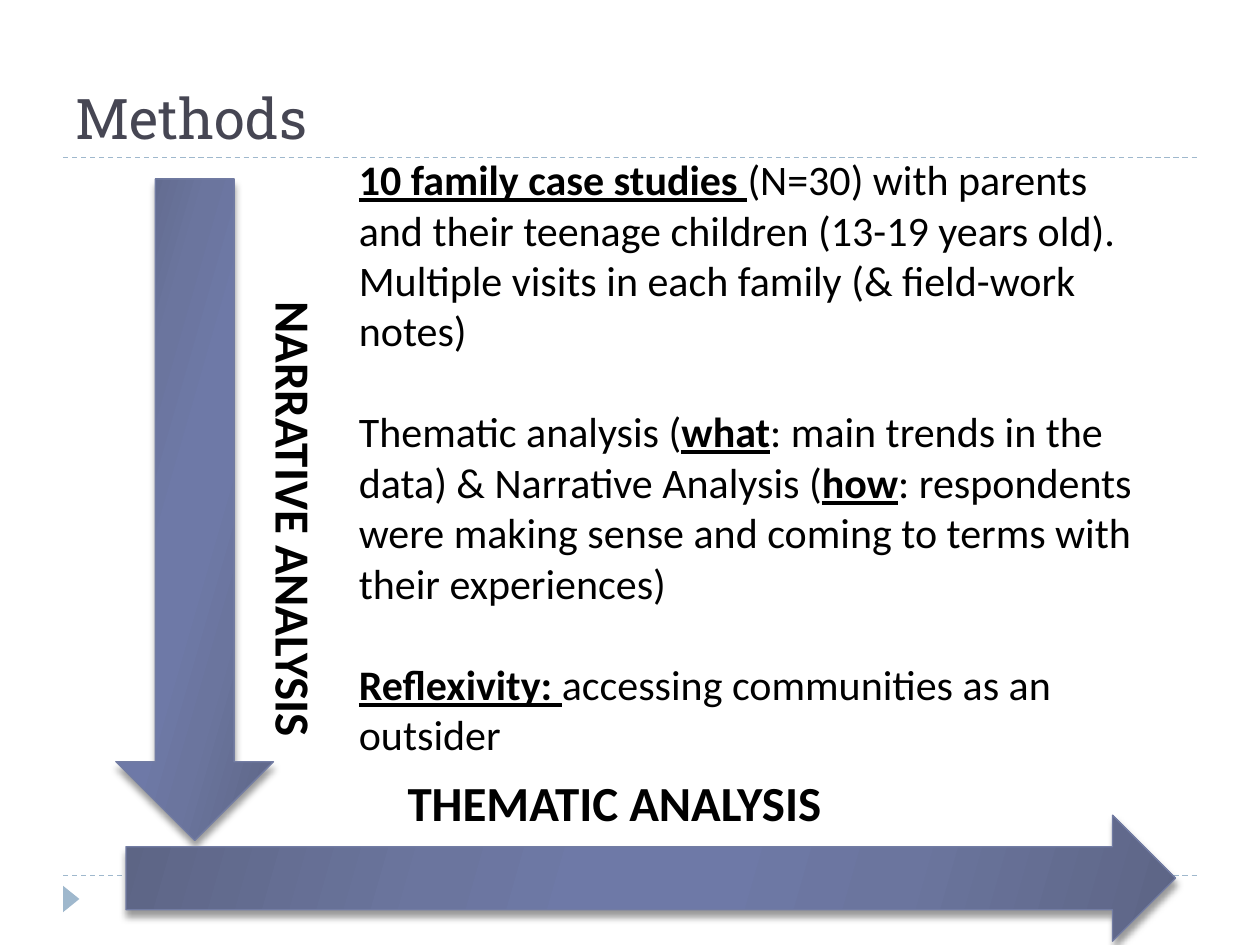
import dataclasses
import typing

import pptx
import pptx.dml.color
import pptx.enum.dml
import pptx.enum.shapes
import pptx.enum.text
import pptx.oxml
import pptx.oxml.ns
import pptx.util

EMU_PER_PX = 9144  # 100 px to the inch
SHAPES = pptx.enum.shapes.MSO_SHAPE
ALIGN = pptx.enum.text.PP_ALIGN
LEFT, CENTER = ALIGN.LEFT, ALIGN.CENTER

ACCENT = "9FB8CD"
ARROW_LINE = "727CA3"
ARROW_STOPS = [(0, "5D6585"), (30, "6B759E"), (45, "6E79A7"),
               (55, "6E79A7"), (73, "6B759E"), (100, "5D6585")]
TITLE_FORMAT = {"name": "Roboto Slab", "size": pptx.util.Pt(32), "bold": False}
LABEL_FORMAT = {"name": "Calibri", "size": pptx.util.Pt(28), "bold": True}
BODY_FORMAT = {"name": "Calibri", "size": pptx.util.Pt(24), "bold": False}
KEY_FORMAT = BODY_FORMAT | {"bold": True, "underline": True}


class Box(typing.NamedTuple):
    left: int
    top: int
    width: int
    height: int


class Run(typing.NamedTuple):
    text: str
    format: dict


@dataclasses.dataclass
class Arrow:
    preset: SHAPES
    box: Box
    rotation: int = 0


@dataclasses.dataclass
class TextBlock:
    box: Box
    paragraphs: list[list[Run]]
    alignment: ALIGN = CENTER
    rotation: int = 0


RULE_TOPS = [695, 125]
ARROWS = [
    Arrow(SHAPES.UP_ARROW, Box(92, 142, 125, 525), 180),
    Arrow(SHAPES.RIGHT_ARROW, Box(100, 647, 833, 100)),
]
TEXT_BLOCKS = [
    TextBlock(Box(117, 608, 750, 57), [[Run("THEMATIC ANALYSIS ", LABEL_FORMAT)]]),
    TextBlock(Box(-77, 360, 575, 104), [[Run("NARRATIVE ANALYSIS", LABEL_FORMAT)]],
              rotation=90),
    TextBlock(Box(275, 117, 637, 495), [
        [Run("10 family case studies ", KEY_FORMAT),
         Run("(N=30) with parents and their teenage children (13-19 years old). "
             "Multiple visits in each family (& field-work notes)", BODY_FORMAT)],
        [Run("Thematic analysis (", BODY_FORMAT),
         Run("what", KEY_FORMAT),
         Run(": main trends in the data) & Narrative Analysis (", BODY_FORMAT),
         Run("how", KEY_FORMAT),
         Run(": respondents were making sense and coming to terms with "
             "their experiences)", BODY_FORMAT)],
        [Run("Reflexivity: ", KEY_FORMAT),
         Run("accessing communities as an outsider", BODY_FORMAT)],
    ], LEFT),
]


def px(length: int) -> pptx.util.Emu:
    return pptx.util.Emu(length * EMU_PER_PX)


def emu_box(box: Box) -> list[pptx.util.Emu]:
    return [px(length) for length in box]


def color(value: str) -> pptx.dml.color.RGBColor:
    return pptx.dml.color.RGBColor.from_string(value)


def drawing_element(parent, tag: str, **attributes):
    """Append an element of the DrawingML namespace to parent."""
    element = pptx.oxml.parse_xml(f"<a:{tag} {pptx.oxml.ns.nsdecls('a')}/>")
    for name, value in attributes.items():
        element.set(name, str(value))
    parent.append(element)
    return element


def add_run(paragraph, run: Run, text_color: str) -> None:
    text_run = paragraph.add_run()
    text_run.text = run.text
    for name, value in run.format.items():
        setattr(text_run.font, name, value)
    text_run.font.color.rgb = color(text_color)


def add_rule(slide, top: int) -> None:
    rule = slide.shapes.add_connector(
        pptx.enum.shapes.MSO_CONNECTOR.STRAIGHT, px(50), px(top), px(950), px(top))
    rule.line.color.rgb = color(ACCENT)
    rule.line.width = pptx.util.Pt(0.75)
    rule.line.dash_style = pptx.enum.dml.MSO_LINE.DASH
    drawing_element(rule.element.spPr, "effectLst")


def add_marker(slide) -> None:
    marker = slide.shapes.add_shape(SHAPES.ISOSCELES_TRIANGLE,
                                    *emu_box(Box(46, 707, 21, 13)))
    marker.rotation = 90
    marker.shadow.inherit = False
    marker.fill.solid()
    marker.fill.fore_color.rgb = color(ACCENT)
    marker.line.fill.background()


def add_title(slide) -> None:
    title = slide.shapes.title
    title.left, title.top, title.width, title.height = emu_box(Box(50, 17, 900, 108))
    frame = title.text_frame
    frame.auto_size = pptx.enum.text.MSO_AUTO_SIZE.NONE
    frame.vertical_anchor = pptx.enum.text.MSO_ANCHOR.BOTTOM
    paragraph = frame.paragraphs[0]
    paragraph.alignment = LEFT
    add_run(paragraph, Run("Methods", TITLE_FORMAT), "464653")


def add_arrow(slide, arrow: Arrow) -> None:
    shape = slide.shapes.add_shape(arrow.preset, *emu_box(arrow.box))
    shape.rotation = arrow.rotation
    shape.line.color.rgb = color(ARROW_LINE)
    shape.line.width = pptx.util.Pt(0.75)

    shape.fill.gradient()
    shape.fill.gradient_angle = 360 - 16
    properties = shape.element.spPr
    stops = properties.find(".//" + pptx.oxml.ns.qn("a:gsLst"))
    for stop in list(stops):
        stops.remove(stop)
    for position, value in ARROW_STOPS:
        stop = drawing_element(stops, "gs", pos=position * 1000)
        drawing_element(stop, "srgbClr", val=value)

    shape.shadow.inherit = False
    effects = properties.find(pptx.oxml.ns.qn("a:effectLst"))
    shadow = drawing_element(effects, "outerShdw", blurRad=pptx.util.Pt(4),
                             dist=pptx.util.Pt(3.4), dir=90 * 60000, rotWithShape=0)
    shadow_color = drawing_element(shadow, "srgbClr", val="000000")
    drawing_element(shadow_color, "alpha", val=40000)


def add_text_block(slide, block: TextBlock) -> None:
    text_box = slide.shapes.add_textbox(*emu_box(block.box))
    text_box.rotation = block.rotation
    frame = text_box.text_frame
    frame.word_wrap = True
    frame.auto_size = pptx.enum.text.MSO_AUTO_SIZE.SHAPE_TO_FIT_TEXT
    for index, runs in enumerate(block.paragraphs):
        paragraph = frame.add_paragraph() if index else frame.paragraphs[0]
        paragraph.alignment = block.alignment
        paragraph.space_before = pptx.util.Pt(29 if index else 0)
        for run in runs:
            add_run(paragraph, run, "000000")


def main() -> None:
    presentation = pptx.Presentation()
    presentation.slide_width, presentation.slide_height = px(1000), px(750)
    slide = presentation.slides.add_slide(
        presentation.slide_layouts.get_by_name("Title Only"))
    for top in RULE_TOPS:
        add_rule(slide, top)
    add_marker(slide)
    add_title(slide)
    for arrow in ARROWS:
        add_arrow(slide, arrow)
    for block in TEXT_BLOCKS:
        add_text_block(slide, block)
    presentation.save("out.pptx")


if __name__ == "__main__":
    main()
